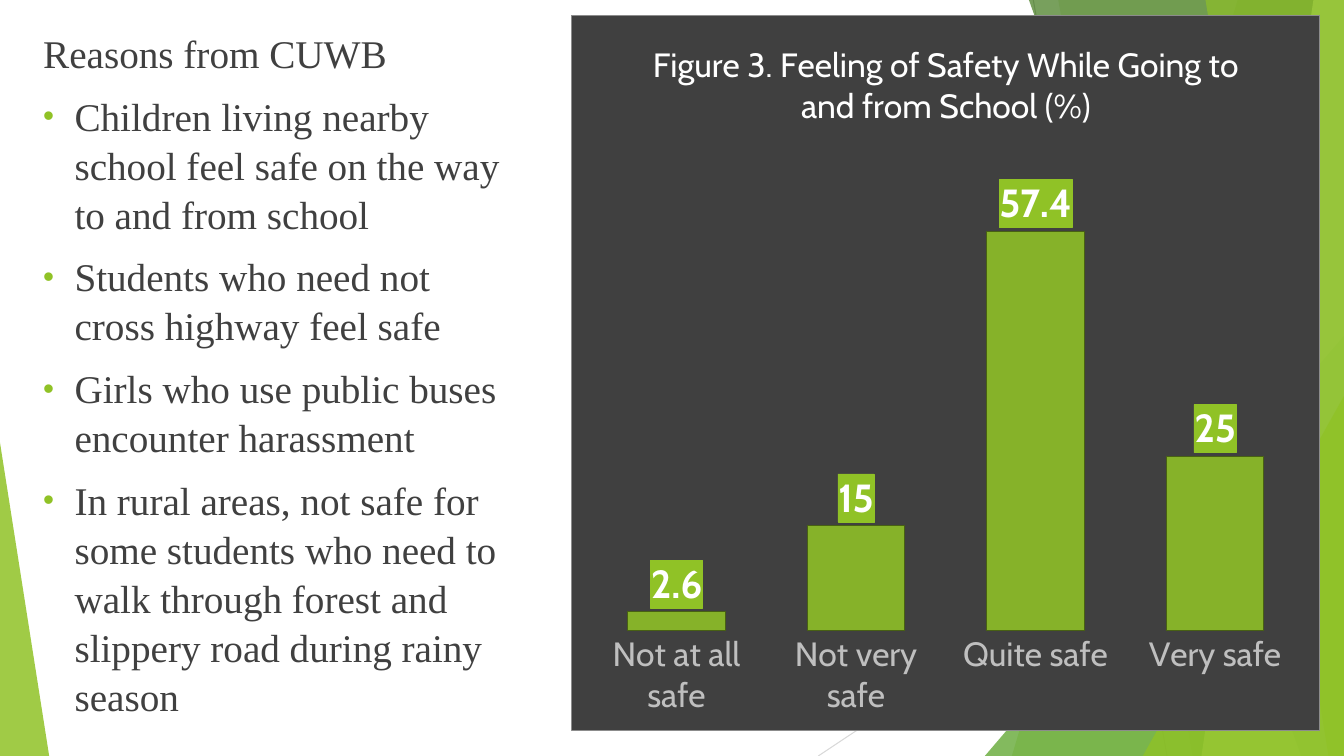
"""Build a slide with reasons on the left and a school safety chart on the right."""
from lxml import etree
from pptx import Presentation, util as u
from pptx.chart import data as cd
from pptx.dml import color as col
from pptx.enum import chart as ce, shapes as sh, text as te
from pptx.oxml import ns, parse_xml

GREEN, DARK, WHITE = "90C226", "404040", "FFFFFF"
SERIF, SANS = "Times New Roman", "Cabin"
WIDE, HIGH = 33.87, 19.05


def paint(fill, shade, node=None, alpha=100):
    fill.solid()
    fill.fore_color.rgb = col.RGBColor.from_string(shade)
    if alpha < 100:
        tag = next(node.iter(ns.qn("a:srgbClr")))
        etree.SubElement(tag, ns.qn("a:alpha")).set("val", str(alpha * 1000))


def style(obj, vals):
    for key, val in vals.items():
        if key == "shade":
            paint(obj.fill, val)
        else:
            setattr(obj, key, val)


prs = Presentation()
style(prs, {"slide_width": u.Cm(WIDE), "slide_height": u.Cm(HIGH)})
slide = prs.slides.add_slide(prs.slide_layouts[6])
items = slide.shapes

for ends, shade in [((26.04, 0, 29.41, HIGH), "BFBFBF"),
                    ((WIDE, 10.24, 20.62, HIGH), "D9D9D9")]:
    line = items.add_connector(sh.MSO_CONNECTOR.STRAIGHT, *map(u.Cm, ends))
    style(line.line, {"shade": shade, "width": u.Pt(0.75)})
    etree.SubElement(line.element.spPr, ns.qn("a:effectLst"))

# Bands hold (top x, bottom x); wedges hold (left, top, width, apex).
decor = [((31.19, 25.5), GREEN, 30),
         ((26.67, 30.05), GREEN, 20),
         ((24.82, 8.46, 9.05, 1), "54A021", 72),
         ((25.93, 32.79), "3F7819", 70),
         ((33.1, 30.28), "C0E474", 70),
         ((30.38, 33.48), GREEN, 65),
         ((28.8, 9.98, 5.07, 1), GREEN, 80),
         ((0, 11.15, 1.24, 0), GREEN, 85)]
for place, shade, alpha in decor:
    if len(place) == 2:
        top, base = map(u.Cm, place)
        path = items.build_freeform(top, 0)
        path.add_line_segments([(u.Cm(WIDE), 0), (u.Cm(WIDE), u.Cm(HIGH)),
                                (base, u.Cm(HIGH))])
        form = path.convert_to_shape()
    else:
        left, top, width, apex = place
        form = items.add_shape(sh.MSO_SHAPE.ISOSCELES_TRIANGLE,
                               *map(u.Cm, (left, top, width, HIGH - top)))
        form.adjustments[0] = apex
    form.shadow.inherit = False
    form.line.fill.background()
    paint(form.fill, shade, form.element, alpha)

data = cd.CategoryChartData()
data.categories = ["Not at all safe", "Not very safe", "Quite safe", "Very safe"]
data.add_series("Series 1", [2.6, 15, 57.4, 25])
chart = items.add_chart(ce.XL_CHART_TYPE.COLUMN_CLUSTERED,
                        *map(u.Cm, (14.4, 0.38, 18.87, 18.03)), data).chart
style(chart, {"has_legend": False, "has_title": True})
style(chart.font, {"name": SANS, "size": u.Pt(10)})
title = chart.chart_title.text_frame
title.text = "Figure 3. Feeling of Safety While Going to and from School (%)"
style(title.paragraphs[0].runs[0].font,
      {"name": SANS, "size": u.Pt(24), "bold": False, "shade": WHITE})

axis = chart.category_axis
style(axis, {"major_tick_mark": ce.XL_TICK_MARK.NONE, "has_major_gridlines": False})
axis.format.line.fill.background()
style(axis.tick_labels.font, {"name": SANS, "size": u.Pt(24), "shade": "BFBFBF"})
style(chart.value_axis, {"visible": False, "has_major_gridlines": False,
                         "minimum_scale": 0, "maximum_scale": 70})

plot = chart.plots[0]
style(plot, {"gap_width": 84, "vary_by_categories": False, "has_data_labels": True})
bars = plot.series[0].format
paint(bars.fill, GREEN, chart.element.find(".//" + ns.qn("c:ser")), 88)
style(bars.line, {"shade": "486113", "width": u.Pt(0.75)})
labels = plot.data_labels
style(labels, {"show_value": True, "position": ce.XL_LABEL_POSITION.OUTSIDE_END})
style(labels.font, {"name": SANS, "size": u.Pt(28), "bold": True, "shade": WHITE})

box = (f'<c:spPr {ns.nsdecls("c", "a")}><a:solidFill><a:srgbClr val="%s"/></a:solidFill>'
       '<a:ln w="6350"><a:solidFill><a:srgbClr val="%s"/></a:solidFill></a:ln></c:spPr>')
chart.element.find(ns.qn("c:chart")).addnext(parse_xml(box % (DARK, "8C8C8C")))
chart.element.find(".//" + ns.qn("c:dLbls") + "/" + ns.qn("c:txPr")).addprevious(
    parse_xml(box % (GREEN, GREEN)))
area = chart.element.find(".//" + ns.qn("c:plotArea"))
for old in area.findall(ns.qn("c:layout")):
    area.remove(old)
frame = etree.Element(ns.qn("c:layout"))
manual = etree.SubElement(frame, ns.qn("c:manualLayout"))
for tag, val in [("layoutTarget", "inner"), ("xMode", "edge"), ("yMode", "edge"),
                 ("x", 0.02), ("y", 0.18), ("w", 0.96), ("h", 0.68)]:
    etree.SubElement(manual, ns.qn("c:" + tag)).set("val", str(val))
area.insert(0, frame)

body = items.add_textbox(*map(u.Cm, (0.84, 0.56, 12.42, 17.83))).text_frame
style(body, {"word_wrap": True, "vertical_anchor": te.MSO_ANCHOR.TOP})
lines = ["Reasons from CUWB",
         "Children living nearby school feel safe on the way to and from school",
         "Students who need not cross highway feel safe",
         "Girls who use public buses encounter harassment",
         "In rural areas, not safe for some students who need to walk through "
         "forest and slippery road during rainy season"]
for rank, words in enumerate(lines):
    para = body.add_paragraph() if rank else body.paragraphs[0]
    run = para.add_run()
    run.text = words
    style(run.font, {"name": SERIF, "size": u.Pt(28), "shade": DARK})
    style(para, {"space_before": u.Pt(10), "line_spacing": 1.04})
    if rank:
        props = para._p.get_or_add_pPr()
        props.set("marL", str(u.Cm(0.79)))
        props.set("indent", str(-u.Cm(0.79)))
        tint = etree.SubElement(props, ns.qn("a:buClr"))
        etree.SubElement(tint, ns.qn("a:srgbClr")).set("val", GREEN)
        for tag, key, val in [("buSzPct", "val", "80000"),
                              ("buFont", "typeface", "Arial"),
                              ("buChar", "char", "•")]:
            etree.SubElement(props, ns.qn("a:" + tag)).set(key, val)

prs.save("out.pptx")
